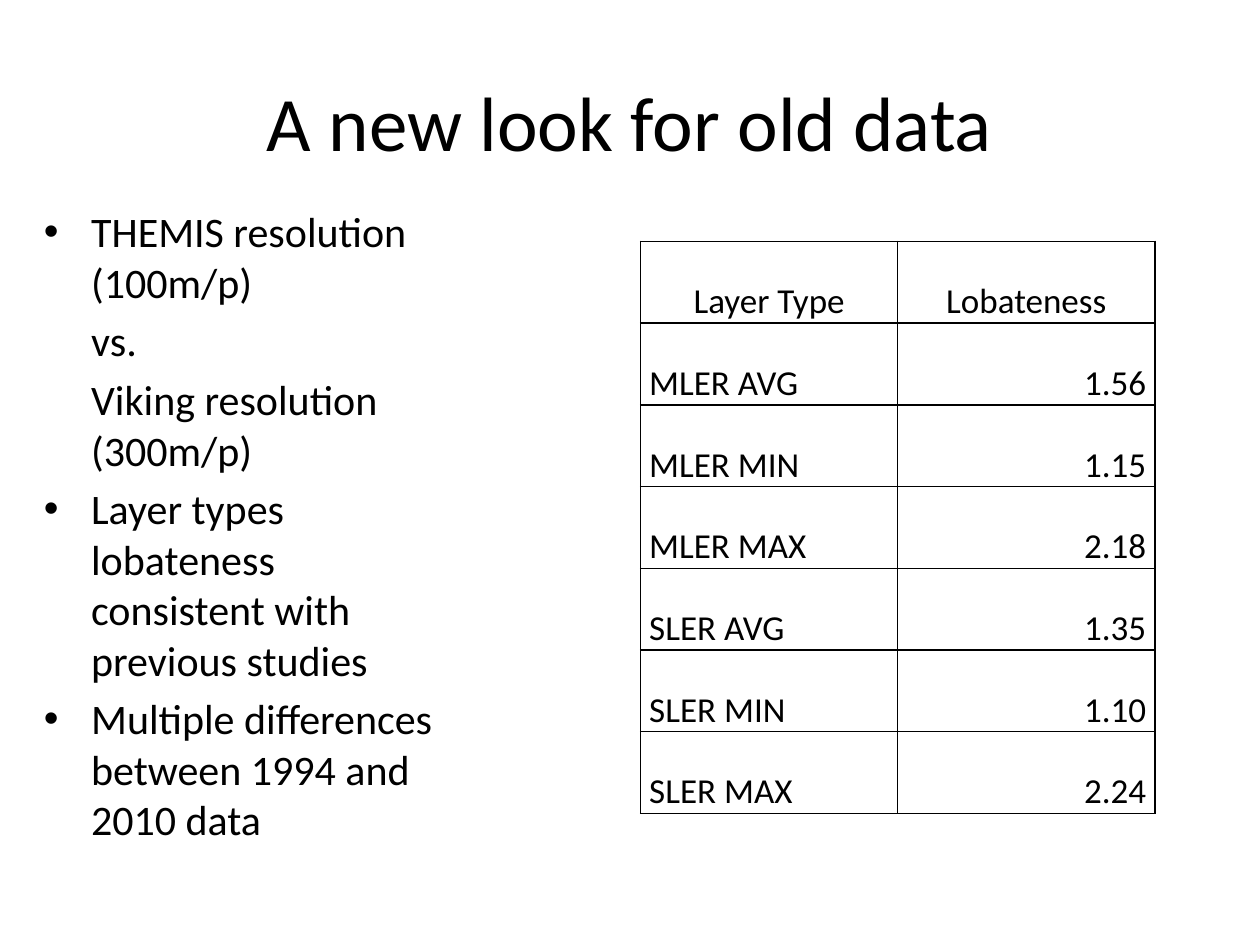
from typing import NamedTuple

from lxml.etree import SubElement
from pptx import Presentation
from pptx.dml.color import RGBColor
from pptx.enum.text import MSO_ANCHOR as Anchor, PP_ALIGN as Align
from pptx.oxml.ns import qn
from pptx.util import Pt

COLORS = {"ink": "000000", "paper": "FFFFFF"}
FONT = "Calibri"
HANGING = 27


class Box(NamedTuple):
    left: float
    top: float
    width: float
    height: float

    def lengths(self) -> list:
        return [Pt(value) for value in self]


class Point(NamedTuple):
    text: str
    bulleted: bool = True


class Measure(NamedTuple):
    layer: str
    lobateness: str


TITLE_BOX = Box(36, 24, 648, 90)
POINTS_BOX = Box(18, 114, 246, 402)
TABLE_BOX = Box(366, 138, 294, 327)

POINTS = [
    Point("THEMIS resolution (100m/p)"),
    Point("vs.", bulleted=False),
    Point("Viking resolution (300m/p)", bulleted=False),
    Point("Layer types lobateness consistent with previous studies"),
    Point("Multiple differences between 1994 and 2010 data"),
]
HEADER = Measure("Layer Type", "Lobateness")
MEASURES = [
    Measure("MLER AVG", "1.56"),
    Measure("MLER MIN", "1.15"),
    Measure("MLER MAX", "2.18"),
    Measure("SLER AVG", "1.35"),
    Measure("SLER MIN", "1.10"),
    Measure("SLER MAX", "2.24"),
]


def style_runs(para, size: float) -> None:
    for span in para.runs:
        span.font.name = FONT
        span.font.size = Pt(size)
        span.font.color.rgb = RGBColor.from_string(COLORS["ink"])


def add_text_frame(page, box: Box):
    frame = page.shapes.add_textbox(*box.lengths()).text_frame
    frame.word_wrap = True
    return frame


def add_title(page, text: str) -> None:
    frame = add_text_frame(page, TITLE_BOX)
    frame.vertical_anchor = Anchor.MIDDLE
    frame.text = text
    para = frame.paragraphs[0]
    para.alignment = Align.CENTER
    style_runs(para, 44)


def set_indent(para, bulleted: bool) -> None:
    """Align all text on the hanging indent, with or without a bullet."""
    props = para._p.get_or_add_pPr()
    props.set("marL", str(Pt(HANGING)))
    props.set("indent", str(Pt(-HANGING if bulleted else 0)))
    if bulleted:
        SubElement(props, qn("a:buFont"), typeface="Arial")
        SubElement(props, qn("a:buChar"), char="•")
    else:
        SubElement(props, qn("a:buNone"))


def add_points(page, points: list[Point]) -> None:
    frame = add_text_frame(page, POINTS_BOX)
    frame.text = "\n".join(point.text for point in points)
    for para, point in zip(frame.paragraphs, points):
        para.space_before = Pt(4.8)
        set_indent(para, point.bulleted)
        style_runs(para, 24)


def add_borders(cell) -> None:
    props = cell._tc.get_or_add_tcPr()
    for side in ("lnL", "lnR", "lnT", "lnB"):
        line = SubElement(props, qn(f"a:{side}"), w=str(Pt(1)))
        fill = SubElement(line, qn("a:solidFill"))
        SubElement(fill, qn("a:srgbClr"), val=COLORS["ink"])


def fill_cell(cell, text: str, alignment: Align) -> None:
    add_borders(cell)
    cell.fill.background()
    cell.vertical_anchor = Anchor.BOTTOM
    cell.margin_left = cell.margin_right = Pt(5)
    cell.margin_top = cell.margin_bottom = Pt(0)
    cell.text = text
    para = cell.text_frame.paragraphs[0]
    para.alignment = alignment
    para.line_spacing = 1.15
    style_runs(para, 20)


def add_measures(page, header: Measure, measures: list[Measure]) -> None:
    rows = [header, *measures]
    table = page.shapes.add_table(
        len(rows), len(header), *TABLE_BOX.lengths()
    ).table
    table.first_row = table.horz_banding = False
    for row_index, row in enumerate(rows):
        if row is header:
            alignments = (Align.CENTER, Align.CENTER)
        else:
            alignments = (Align.LEFT, Align.RIGHT)
        for column, (text, alignment) in enumerate(zip(row, alignments)):
            fill_cell(table.cell(row_index, column), text, alignment)


def main() -> None:
    deck = Presentation()
    deck.slide_width, deck.slide_height = Pt(720), Pt(540)
    page = deck.slides.add_slide(deck.slide_layouts[6])
    page.background.fill.solid()
    page.background.fill.fore_color.rgb = RGBColor.from_string(COLORS["paper"])
    add_title(page, "A new look for old data")
    add_points(page, POINTS)
    add_measures(page, HEADER, MEASURES)
    deck.save("out.pptx")


if __name__ == "__main__":
    main()
